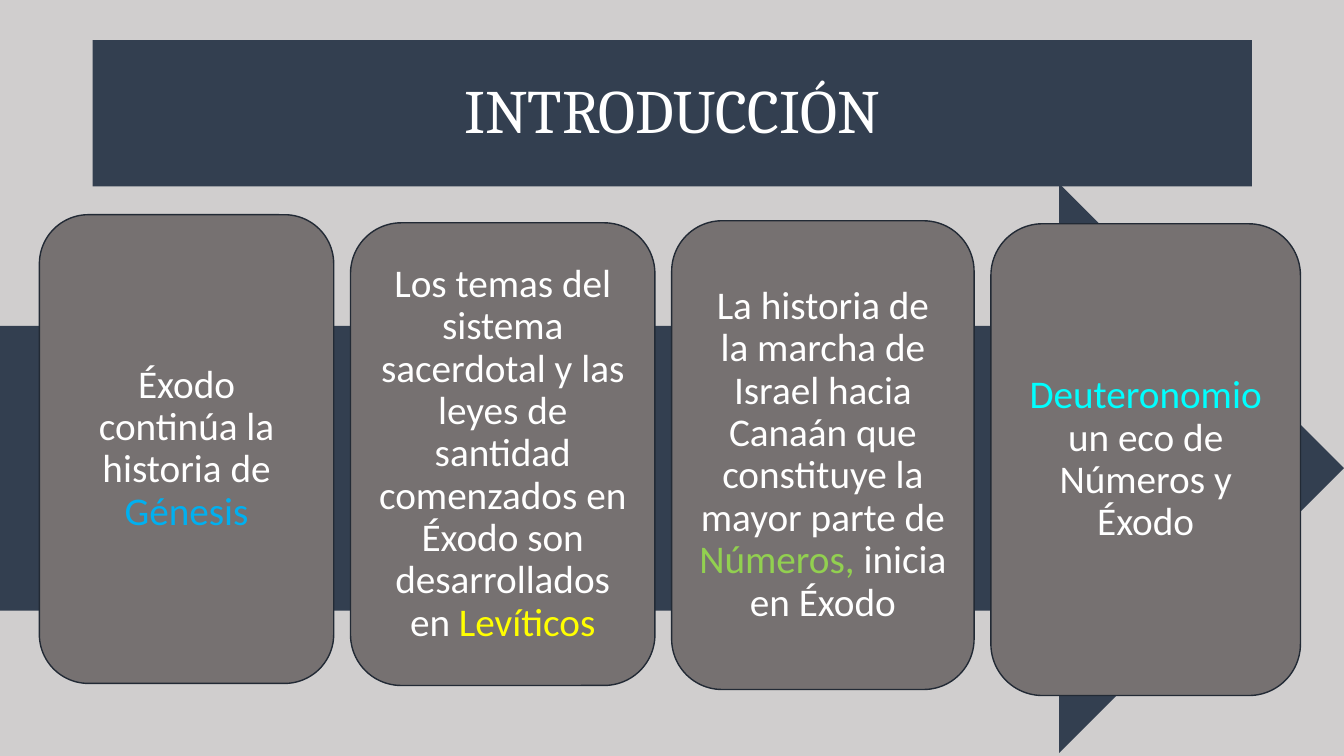
from dataclasses import dataclass
from pptx import Presentation
from pptx.dml.color import RGBColor
from pptx.enum.shapes import MSO_SHAPE as SHAPE
from pptx.enum.text import MSO_ANCHOR as ANCHOR, PP_ALIGN as ALIGN
from pptx.util import Inches, Pt


@dataclass(frozen=True)
class Theme:
    back: str = "D0CECE"
    navy: str = "333F50"
    card: str = "767171"
    edge: str = "222A35"
    text: str = "FFFFFF"
    blue: str = "00B0F0"
    yellow: str = "FFFF00"
    green: str = "92D050"
    cyan: str = "00FFFF"
    title_font: str = "Cambria"
    body_font: str = "Calibri"
    title_size: int = 44
    body_size: int = 28


T = Theme()
WIDTH, HEIGHT = Inches(13.33), Inches(7.5)

# Boxes are left, top, width, height in percent of the slide
TITLE_BOX = (6.9, 5.33, 86.25, 19.33)
ARROW_BOX = (0, 24.27, 100, 75.33)
CARDS_LEFT, CARD_GAP = 2.93, 1.25

# Each card: top, width, height, then its coloured runs
CARDS = [
    (28.4, 21.9, 62, [("Éxodo continúa la historia de ", T.text), ("Génesis", T.blue)]),
    (29.47, 22.65, 61.2, [
        ("Los temas del sistema sacerdotal y las leyes de santidad comenzados "
         "en Éxodo son desarrollados en ", T.text),
        ("Levíticos", T.yellow)]),
    (29.2, 22.5, 62, [
        ("La historia de la marcha de Israel hacia Canaán que constituye la "
         "mayor parte de ", T.text),
        ("Números, ", T.green), ("inicia en Éxodo", T.text)]),
    (29.6, 23.03, 62.4, [("Deuteronomio ", T.cyan), ("un eco de Números y Éxodo", T.text)]),
]


def add_shape(s, kind, box, fill, line=None):
    x, y, w, h = box
    sp = s.shapes.add_shape(kind, int(WIDTH * x / 100), int(HEIGHT * y / 100),
                            int(WIDTH * w / 100), int(HEIGHT * h / 100))
    sp.shadow.inherit = False
    sp.fill.solid()
    sp.fill.fore_color.rgb = RGBColor.from_string(fill)
    if line:
        sp.line.color.rgb = RGBColor.from_string(line)
        sp.line.width = Pt(1)
    else:
        sp.line.fill.background()
    return sp


def write(sp, runs, *, font, size, inset=0.1):
    tf = sp.text_frame
    tf.word_wrap = True
    tf.vertical_anchor = ANCHOR.MIDDLE
    tf.margin_left = tf.margin_right = tf.margin_top = tf.margin_bottom = Inches(inset)
    p = tf.paragraphs[0]
    p.alignment = ALIGN.CENTER
    p.line_spacing = 0.9
    for text, color in runs:
        r = p.add_run()
        r.text = text
        r.font.name = font
        r.font.size = Pt(size)
        r.font.color.rgb = RGBColor.from_string(color)


def title_bar(s, box):
    sp = add_shape(s, SHAPE.RECTANGLE, box, T.navy)
    write(sp, [("INTRODUCCIÓN", T.text)], font=T.title_font, size=T.title_size)


def card_process(s, box):
    # Arrow behind the cards
    add_shape(s, SHAPE.RIGHT_ARROW, box, T.navy)
    # Cards from left to right with an equal gap
    left = box[0] + CARDS_LEFT
    for top, width, height, runs in CARDS:
        sp = add_shape(s, SHAPE.ROUNDED_RECTANGLE, (left, top, width, height), T.card, T.edge)
        write(sp, runs, font=T.body_font, size=T.body_size, inset=0.12)
        left += width + CARD_GAP


def main():
    prs = Presentation()
    prs.slide_width, prs.slide_height = WIDTH, HEIGHT
    s = prs.slides.add_slide(prs.slide_layouts[6])
    s.background.fill.solid()
    s.background.fill.fore_color.rgb = RGBColor.from_string(T.back)
    title_bar(s, TITLE_BOX)
    card_process(s, ARROW_BOX)
    prs.save("out.pptx")


if __name__ == "__main__":
    main()
